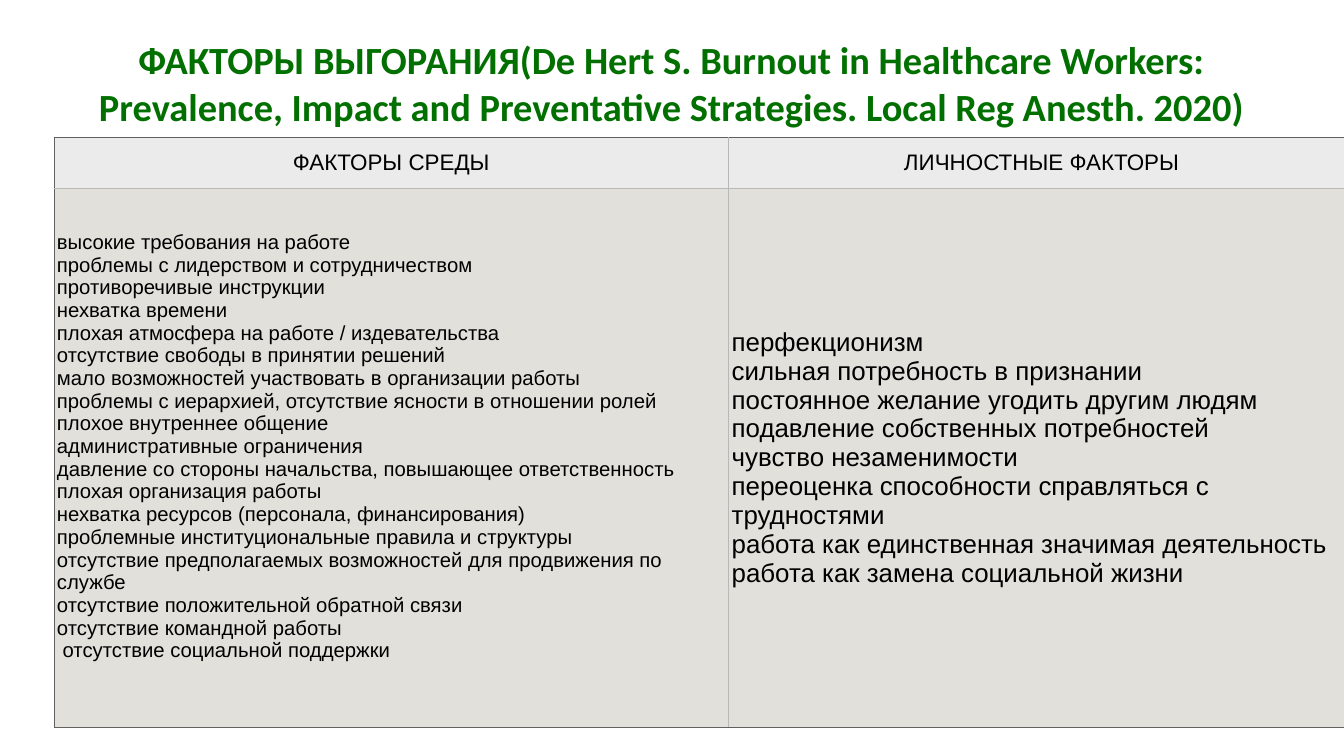
import pptx
import pptx.dml.color
import pptx.enum.text
import pptx.oxml
import pptx.oxml.ns
import pptx.util

Inches, Pt = pptx.util.Inches, pptx.util.Pt
PP_ALIGN = pptx.enum.text.PP_ALIGN
MIDDLE = pptx.enum.text.MSO_ANCHOR.MIDDLE
INSET = Inches(0.06)
OUTER, INNER = "606060", "B8B8B8"


def rgb(value):
    return pptx.dml.color.RGBColor.from_string(value)


def write(p, lines, align, color, **font):
    p.alignment = align
    for i, line in enumerate(lines):
        if i:
            p.add_line_break()
        r = p.add_run()
        r.text = line
        r.font.color.rgb = rgb(color)
        for name, value in font.items():
            setattr(r.font, name, value)


prs = pptx.Presentation()
prs.slide_width, prs.slide_height = Inches(26.67), Inches(15)
s = prs.slides.add_slide(prs.slide_layouts[6])

# Title
sp = s.shapes.add_textbox(Inches(1.85), Inches(0.39), Inches(22.97), Inches(2.5))
tf = sp.text_frame
frame = {"word_wrap": True, "vertical_anchor": MIDDLE, "margin_left": INSET,
         "margin_right": INSET, "margin_top": INSET, "margin_bottom": INSET}
for name, value in frame.items():
    setattr(tf, name, value)
title = ("ФАКТОРЫ ВЫГОРАНИЯ(De Hert S. Burnout in Healthcare Workers: "
         "Prevalence, Impact and Preventative Strategies. Local Reg Anesth. 2020)")
write(tf.paragraphs[0], [title], PP_ALIGN.CENTER, "027001",
      name="Calibri", size=Pt(54.9), bold=True)

# Table content, one entry per column
headers = ["ФАКТОРЫ СРЕДЫ", "ЛИЧНОСТНЫЕ ФАКТОРЫ"]
factors = [
    ["высокие требования на работе",
     "проблемы с лидерством и сотрудничеством",
     "противоречивые инструкции",
     "нехватка времени",
     "плохая атмосфера на работе / издевательства",
     "отсутствие свободы в принятии решений",
     "мало возможностей участвовать в организации работы",
     "проблемы с иерархией, отсутствие ясности в отношении ролей",
     "плохое внутреннее общение",
     "административные ограничения",
     "давление со стороны начальства, повышающее ответственность",
     "плохая организация работы",
     "нехватка ресурсов (персонала, финансирования)",
     "проблемные институциональные правила и структуры",
     "отсутствие предполагаемых возможностей для продвижения по службе",
     "отсутствие положительной обратной связи",
     "отсутствие командной работы",
     " отсутствие социальной поддержки"],
    ["перфекционизм",
     "сильная потребность в признании",
     "постоянное желание угодить другим людям",
     "подавление собственных потребностей",
     "чувство незаменимости",
     "переоценка способности справляться с трудностями",
     "работа как единственная значимая деятельность",
     "работа как замена социальной жизни"],
]
rows = [
    {"height": 1.01, "fill": "EBEBEB", "align": PP_ALIGN.CENTER,
     "sizes": [32, 32], "bottoms": [0.06, 0.06], "cells": [[h] for h in headers]},
    {"height": 10.71, "fill": "E1E0DA", "align": PP_ALIGN.LEFT,
     "sizes": [29, 37], "bottoms": [0.51, 0.06], "cells": factors},
]
col_widths = [13.39, 12.42]

# Table
table = s.shapes.add_table(
    len(rows), len(col_widths), Inches(1.07), Inches(2.72),
    Inches(sum(col_widths)), Inches(sum(row["height"] for row in rows))).table
for column, width in zip(table.columns, col_widths):
    column.width = Inches(width)

for i, row in enumerate(rows):
    table.rows[i].height = Inches(row["height"])
    for j, lines in enumerate(row["cells"]):
        cell = table.cell(i, j)
        cell.fill.solid()
        cell.fill.fore_color.rgb = rgb(row["fill"])
        layout = {"vertical_anchor": MIDDLE, "margin_left": INSET, "margin_right": INSET,
                  "margin_top": INSET, "margin_bottom": Inches(row["bottoms"][j])}
        for name, value in layout.items():
            setattr(cell, name, value)
        write(cell.text_frame.paragraphs[0], lines, row["align"], "000000",
              name="Arial", size=Pt(row["sizes"][j]), bold=False)

        # Borders: dark around the table, light between cells
        borders = {"lnL": j == 0, "lnR": j == len(col_widths) - 1,
                   "lnT": i == 0, "lnB": i == len(rows) - 1}
        tcPr = cell._tc.get_or_add_tcPr()
        for k, (tag, outer) in enumerate(borders.items()):
            tcPr.insert(k, pptx.oxml.parse_xml(
                f'<a:{tag} {pptx.oxml.ns.nsdecls("a")} w="{Pt(1)}"><a:solidFill>'
                f'<a:srgbClr val="{OUTER if outer else INNER}"/></a:solidFill></a:{tag}>'))

prs.save("out.pptx")
